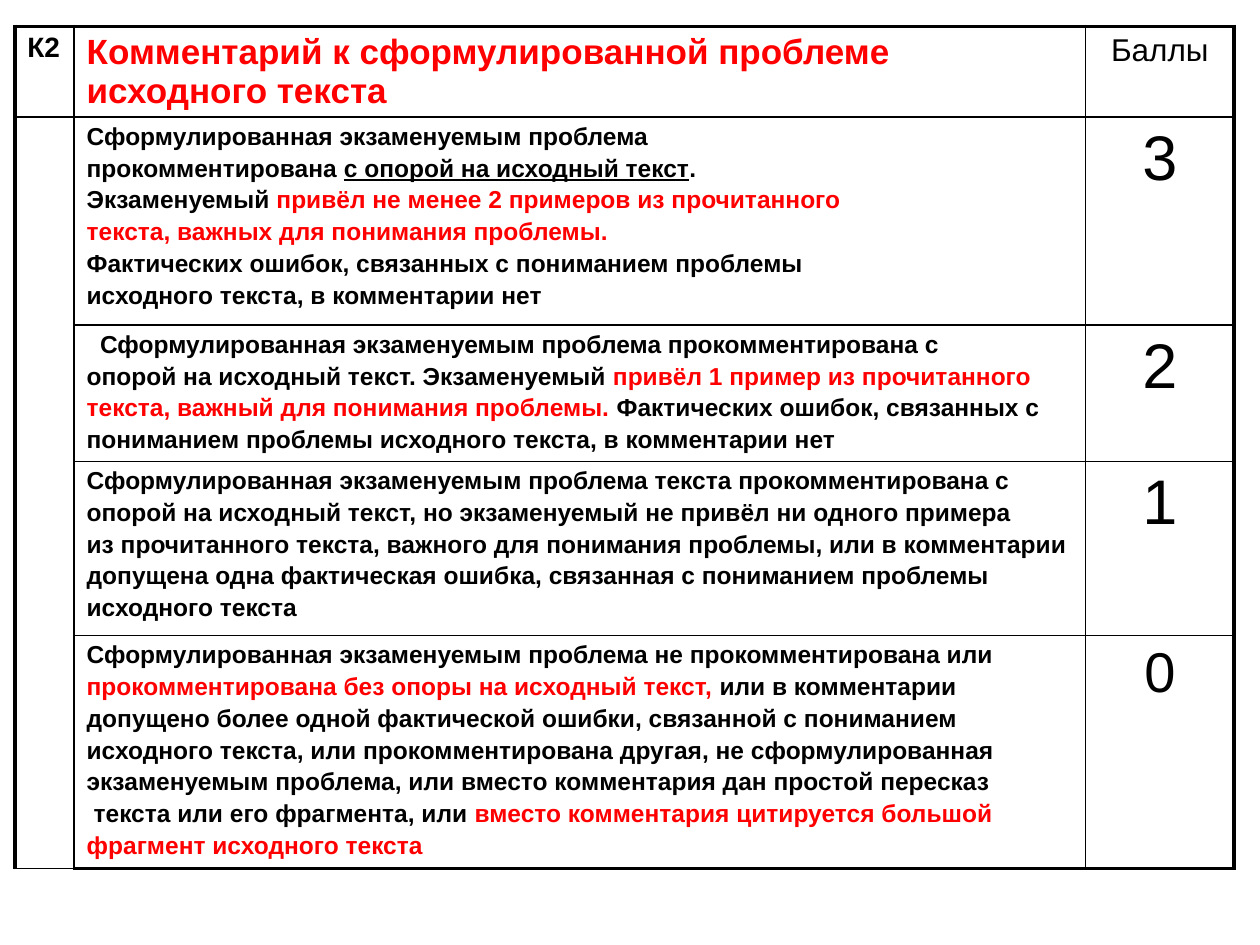
from dataclasses import dataclass

from lxml.etree import SubElement
from pptx import Presentation
from pptx.dml.color import RGBColor
from pptx.enum.text import PP_ALIGN
from pptx.oxml.ns import qn
from pptx.util import Cm, Pt


@dataclass(frozen=True)
class Theme:
    face: str = "Arial"
    ink: str = "000000"
    red: str = "FF0000"
    code: int = 16
    head: int = 20
    label: int = 18
    body: int = 14
    mark: int = 36
    zero: int = 32
    thin: float = 1
    thick: float = 2.25
    gap: float = 0.17


@dataclass(frozen=True)
class Span:
    text: str
    red: bool = False
    under: bool = False


@dataclass(frozen=True)
class Line:
    spans: tuple
    lead: float = 0


def line(*spans, lead=0):
    return Line(tuple(s if isinstance(s, Span) else Span(s) for s in spans), lead)


def red(text):
    return Span(text, red=True)


THEME = Theme()
BOX = (0.3, 0.53, 24.58)
COLS = (0.47, 8.03, 1.18)
ROWS = (1.81, 4.19, 2.75, 3.51, 4.7)

HEAD = [line(red("Комментарий к сформулированной проблеме исходного текста"))]
LEVELS = [
    ("3", THEME.mark, [
        line("Сформулированная экзаменуемым проблема"),
        line("прокомментирована ", Span("с опорой на исходный текст", under=True), "."),
        line("Экзаменуемый ", red("привёл не менее 2 примеров из прочитанного")),
        line(red("текста, важных для понимания проблемы.")),
        line("Фактических ошибок, связанных с пониманием проблемы"),
        line("исходного текста, в комментарии нет"),
    ]),
    ("2", THEME.mark, [
        line("Сформулированная экзаменуемым проблема прокомментирована с", lead=0.27),
        line("опорой на исходный текст. Экзаменуемый ",
             red("привёл 1 пример из прочитанного")),
        line(red("текста, важный для понимания проблемы. "),
             "Фактических ошибок, связанных с"),
        line("пониманием проблемы исходного текста, в комментарии нет"),
    ]),
    ("1", THEME.mark, [
        line("Сформулированная экзаменуемым проблема текста прокомментирована с"),
        line("опорой на исходный текст, но экзаменуемый не привёл ни одного примера"),
        line("из прочитанного текста, важного для понимания проблемы, или в комментарии"),
        line("допущена одна фактическая ошибка, связанная с пониманием проблемы"),
        line("исходного текста"),
    ]),
    ("0", THEME.zero, [
        line("Сформулированная экзаменуемым проблема не прокомментирована или"),
        line(red("прокомментирована без опоры на исходный текст, "), "или в комментарии"),
        line("допущено более одной фактической ошибки, связанной с пониманием"),
        line("исходного текста, или прокомментирована другая, не сформулированная"),
        line("экзаменуемым проблема, или вместо комментария дан простой пересказ"),
        line("текста или его фрагмента, или ",
             red("вместо комментария цитируется большой"), lead=0.14),
        line(red("фрагмент исходного текста")),
    ]),
]


def write(cell, lines, size, bold=True, align=PP_ALIGN.LEFT):
    frame = cell.text_frame
    for num, item in enumerate(lines):
        para = frame.add_paragraph() if num else frame.paragraphs[0]
        para.alignment = align
        para.space_before = Pt(size * THEME.gap)
        para.font.name = THEME.face
        para.font.size = Pt(size)
        para.font.bold = bold
        if item.lead:
            para._p.get_or_add_pPr().set("indent", str(Cm(item.lead)))
        for span in item.spans:
            run = para.add_run()
            run.text = span.text
            tone = THEME.red if span.red else THEME.ink
            run.font.color.rgb = RGBColor.from_string(tone)
            if span.under:
                run.font.underline = True


def edge(cell, row, col):
    outer = {"L": col == 0, "R": col == len(COLS) - 1,
             "T": row == 0, "B": row == len(ROWS) - 1}
    props = cell._tc.get_or_add_tcPr()
    for side, thick in outer.items():
        width = Pt(THEME.thick if thick else THEME.thin)
        rule = SubElement(props, qn(f"a:ln{side}"), w=str(width))
        fill = SubElement(rule, qn("a:solidFill"))
        SubElement(fill, qn("a:srgbClr"), val=THEME.ink)
    cell.fill.background()


def rubric(slide, box):
    left, top, width = box
    shape = slide.shapes.add_table(len(ROWS), len(COLS), Cm(left), Cm(top),
                                   Cm(width), Cm(sum(ROWS)))
    table = shape.table
    table.first_row = table.horz_banding = False
    for col, share in zip(table.columns, COLS):
        col.width = Cm(width * share / sum(COLS))
    for row, height in zip(table.rows, ROWS):
        row.height = Cm(height)
    for row in range(len(ROWS)):
        for col in range(len(COLS)):
            edge(table.cell(row, col), row, col)
    table.cell(1, 0).merge(table.cell(len(ROWS) - 1, 0))

    write(table.cell(0, 0), [line("К2")], THEME.code)
    write(table.cell(0, 1), HEAD, THEME.head)
    write(table.cell(0, 2), [line("Баллы")], THEME.label, False, PP_ALIGN.CENTER)
    for row, (mark, size, lines) in enumerate(LEVELS, 1):
        write(table.cell(row, 1), lines, THEME.body)
        write(table.cell(row, 2), [line(mark)], size, False, PP_ALIGN.CENTER)


def main():
    deck = Presentation()
    deck.slide_width, deck.slide_height = Cm(25.4), Cm(19.05)
    slide = deck.slides.add_slide(deck.slide_layouts[6])
    rubric(slide, BOX)
    deck.save("out.pptx")


if __name__ == "__main__":
    main()
